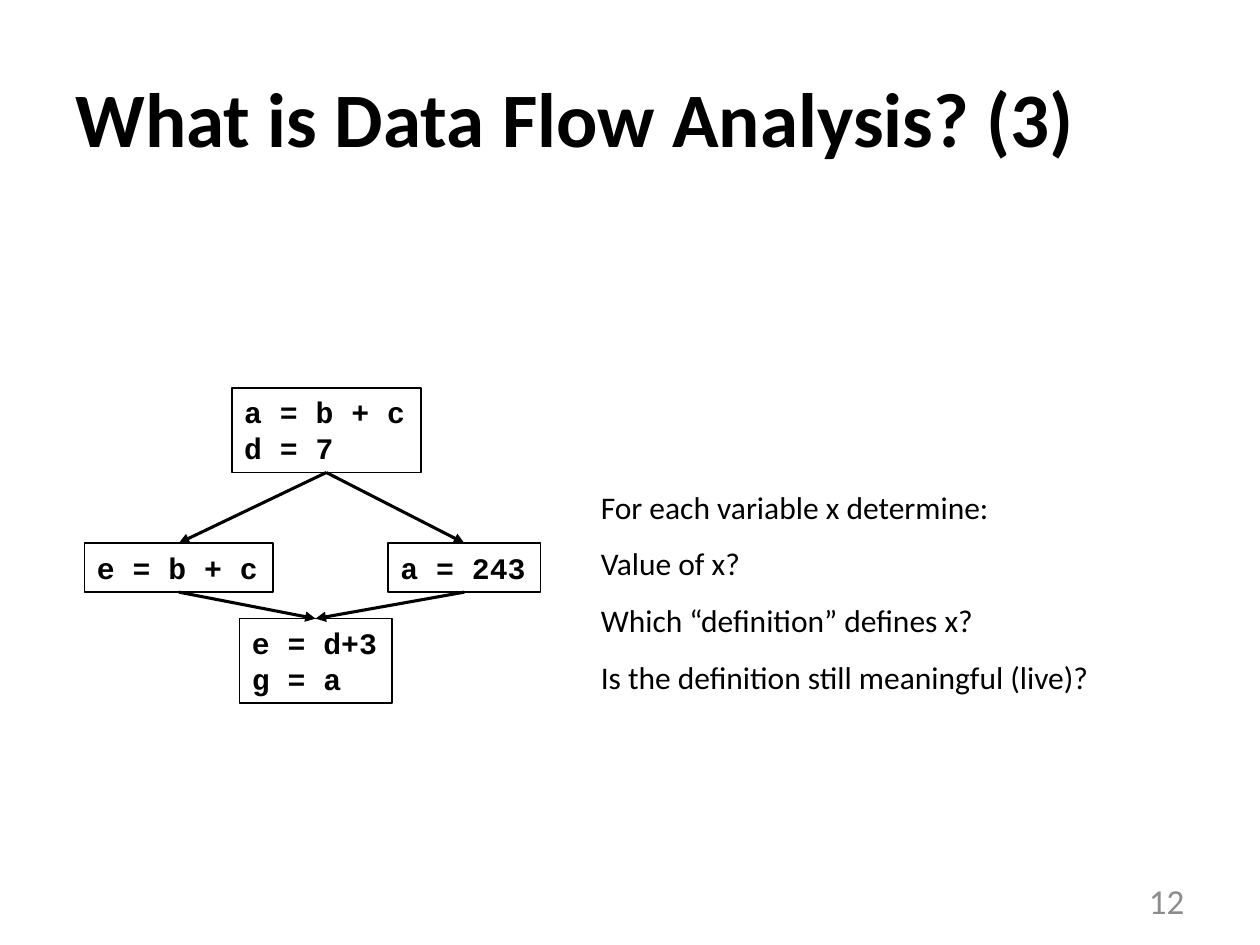
from lxml import etree
from pptx import Presentation
from pptx import util as u
from pptx.dml.color import RGBColor
from pptx.enum import shapes, text
from pptx.oxml.ns import qn

BLACK = RGBColor(0x00, 0x00, 0x00)
GRAY = RGBColor(0x8C, 0x8C, 0x8C)
TOP_SITE, BOTTOM_SITE = 0, 2

BLOCKS = {
    "left": (0.67, 4.31, 1.5, 0.39, ["e = b + c"]),
    "right": (3.08, 4.31, 1.21, 0.39, ["a = 243"]),
    "join": (1.9, 4.91, 1.21, 0.67, ["e = d+3", "g = a"]),
    "entry": (1.84, 3.08, 1.5, 0.67, ["a = b + c", "d = 7"]),
}
FLOWS = [("left", "join"), ("right", "join"), ("entry", "left"), ("entry", "right")]
QUESTIONS = [
    "For each variable x determine:",
    "Value of x?",
    "Which “definition” defines x?",
    "Is the definition still meaningful (live)?",
]


def inches(*lengths):
    return [u.Inches(length) for length in lengths]


def write_text(frame, lines, size, font="Calibri", color=BLACK, bold=False,
               align=text.PP_ALIGN.LEFT, anchor=text.MSO_ANCHOR.TOP,
               spacing=1.0, wrap=True, fit=text.MSO_AUTO_SIZE.NONE):
    frame.word_wrap = wrap
    frame.auto_size = fit
    frame.vertical_anchor = anchor
    for index, line in enumerate(lines):
        para = frame.paragraphs[0] if index == 0 else frame.add_paragraph()
        para.alignment = align
        para.line_spacing = spacing
        span = para.add_run()
        span.text = line
        span.font.size = u.Pt(size)
        span.font.name = font
        span.font.bold = bold
        span.font.color.rgb = color


def add_title(page, left, top, width, height):
    title = page.shapes.title
    title.left, title.top, title.width, title.height = inches(left, top, width, height)
    write_text(title.text_frame, ["What is Data Flow Analysis? (3)"], 44,
               bold=True, anchor=text.MSO_ANCHOR.MIDDLE)


def add_page_number(page, left, top, width, height):
    box = page.shapes.add_textbox(*inches(left, top, width, height))
    write_text(box.text_frame, ["12"], 20, color=GRAY,
               align=text.PP_ALIGN.RIGHT, anchor=text.MSO_ANCHOR.MIDDLE)


def add_questions(page, left, top, width, height):
    box = page.shapes.add_textbox(*inches(left, top, width, height))
    write_text(box.text_frame, QUESTIONS, 18, spacing=1.5, wrap=False,
               fit=text.MSO_AUTO_SIZE.SHAPE_TO_FIT_TEXT)


def add_block(page, left, top, width, height, code):
    block = page.shapes.add_shape(shapes.MSO_SHAPE.RECTANGLE,
                                  *inches(left, top, width, height))
    block.shadow.inherit = False
    block.fill.background()
    block.line.color.rgb = BLACK
    block.line.width = u.Pt(1)
    write_text(block.text_frame, code, 17, font="Courier New", bold=True,
               wrap=False, fit=text.MSO_AUTO_SIZE.SHAPE_TO_FIT_TEXT)
    return block


def add_flow(page, source, target):
    arrow = page.shapes.add_connector(shapes.MSO_CONNECTOR.STRAIGHT, 0, 0, 0, 0)
    arrow.begin_connect(source, BOTTOM_SITE)
    arrow.end_connect(target, TOP_SITE)
    arrow.line.color.rgb = BLACK
    arrow.line.width = u.Pt(1.75)
    etree.SubElement(arrow.line._get_or_add_ln(), qn("a:tailEnd"), type="triangle")
    etree.SubElement(arrow._element.spPr, qn("a:effectLst"))


def add_flow_graph(page, left, top):
    origin_left = min(block[0] for block in BLOCKS.values())
    origin_top = min(block[1] for block in BLOCKS.values())
    blocks = {
        name: add_block(page, left + x - origin_left, top + y - origin_top,
                        width, height, code)
        for name, (x, y, width, height, code) in BLOCKS.items()
    }
    for source, target in FLOWS:
        add_flow(page, blocks[source], blocks[target])


def main():
    deck = Presentation()
    deck.slide_width, deck.slide_height = inches(10, 7.5)
    page = deck.slides.add_slide(deck.slide_layouts.get_by_name("Title Only"))
    add_title(page, 0.5, 0.3, 9, 1.25)
    add_page_number(page, 7.17, 6.95, 2.33, 0.4)
    add_questions(page, 4.67, 3.67, 4.13, 1.92)
    add_flow_graph(page, 0.67, 3.08)
    deck.save("out.pptx")


if __name__ == "__main__":
    main()
